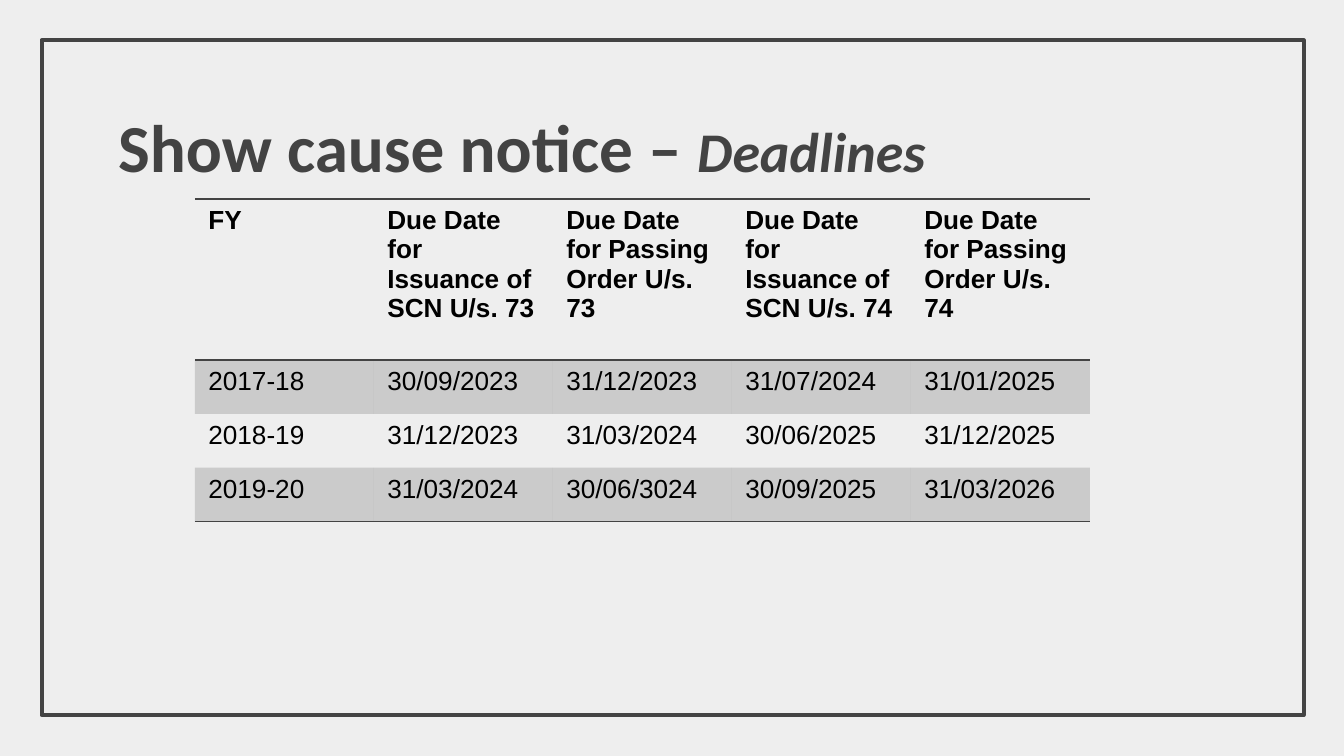
from lxml import etree
from pptx import Presentation
from pptx import util as u
from pptx.dml.color import RGBColor
from pptx.enum import shapes, text
from pptx.oxml import ns

COLORS = {"bg": "EEEEEE", "dark": "434343", "text": "000000"}
NO_STYLE = "{2D5ABB26-0587-4C30-8999-92F81FD0307C}"
ROWS = [
    ["FY", "Due Date for Issuance of SCN U/s. 73", "Due Date for Passing Order U/s. 73",
     "Due Date for Issuance of SCN U/s. 74", "Due Date for Passing Order U/s. 74"],
    ["2017-18", "30/09/2023", "31/12/2023", "31/07/2024", "31/01/2025"],
    ["2018-19", "31/12/2023", "31/03/2024", "30/06/2025", "31/12/2025"],
    ["2019-20", "31/03/2024", "30/06/3024", "30/09/2025", "31/03/2026"],
]


def rgb(name):
    return RGBColor.from_string(COLORS[name])


def style_run(r, font, size, color, bold=False, italic=False):
    f = r.font
    f.name, f.size, f.bold, f.italic = font, u.Pt(size), bold, italic
    f.color.rgb = rgb(color)


def add_frame(s, x, y, w, h):
    sp = s.shapes.add_shape(shapes.MSO_SHAPE.RECTANGLE,
                            u.Inches(x), u.Inches(y), u.Inches(w), u.Inches(h))
    sp.shadow.inherit = False
    sp.fill.background()
    sp.line.color.rgb = rgb("dark")
    sp.line.width = u.Pt(2.25)


def add_title(s, x, y, w, h):
    tf = s.shapes.add_textbox(u.Inches(x), u.Inches(y), u.Inches(w), u.Inches(h)).text_frame
    tf.word_wrap = True
    tf.vertical_anchor = text.MSO_ANCHOR.BOTTOM
    tf.margin_left = tf.margin_right = tf.margin_top = tf.margin_bottom = u.Inches(0.1)
    p = tf.paragraphs[0]
    for words, size, italic in [("Show cause notice – ", 36, False), ("Deadlines", 30, True)]:
        r = p.add_run()
        r.text = words
        style_run(r, "Calibri", size, "dark", bold=True, italic=italic)


def set_borders(cell, sides):
    """Draw 1 pt rules; borders come before the fill in the cell properties."""
    tc_pr = cell._tc.get_or_add_tcPr()
    for i, side in enumerate(sides):
        ln = etree.Element(ns.qn(f"a:ln{side}"), w=str(u.Pt(1)))
        fill = etree.SubElement(ln, ns.qn("a:solidFill"))
        etree.SubElement(fill, ns.qn("a:srgbClr"), val=COLORS["dark"])
        tc_pr.insert(i, ln)


def shade(cell, percent):
    cell.fill.solid()
    cell.fill.fore_color.rgb = rgb("dark")
    clr = cell._tc.tcPr.find(".//" + ns.qn("a:srgbClr"))
    etree.SubElement(clr, ns.qn("a:alpha"), val=str(percent * 1000))


def add_deadlines(s, x, y, w, header_h, row_h):
    n = len(ROWS[0])
    last = len(ROWS) - 1
    tbl = s.shapes.add_table(len(ROWS), n, u.Inches(x), u.Inches(y), u.Inches(w),
                             u.Inches(header_h + row_h * last)).table
    tbl._tbl.tblPr.find(ns.qn("a:tableStyleId")).text = NO_STYLE
    for col in tbl.columns:
        col.width = u.Inches(w / n)
    for i, values in enumerate(ROWS):
        tbl.rows[i].height = u.Inches(row_h if i else header_h)
        for j, value in enumerate(values):
            cell = tbl.cell(i, j)
            cell.text_frame.text = value
            style_run(cell.text_frame.paragraphs[0].runs[0], "Arial", 14, "text", bold=i == 0)
            # Odd rows are banded
            if i % 2:
                shade(cell, 20)
            else:
                cell.fill.background()
            # Rules above and below the header, and under the last row
            set_borders(cell, "TB" if i == 0 else "B" if i == last else "")


def main():
    prs = Presentation()
    # Widescreen, 16:9
    prs.slide_width = u.Inches(10)
    prs.slide_height = u.Inches(10 * 9 / 16)
    s = prs.slides.add_slide(prs.slide_layouts[6])
    s.background.fill.solid()
    s.background.fill.fore_color.rgb = rgb("bg")

    add_frame(s, 0.31, 0.3, 9.39, 5.02)
    add_deadlines(s, 1.45, 1.48, 6.66, header_h=1.2, row_h=0.4)
    add_title(s, 0.78, 0.67, 8.45, 0.81)
    prs.save("out.pptx")


if __name__ == "__main__":
    main()
